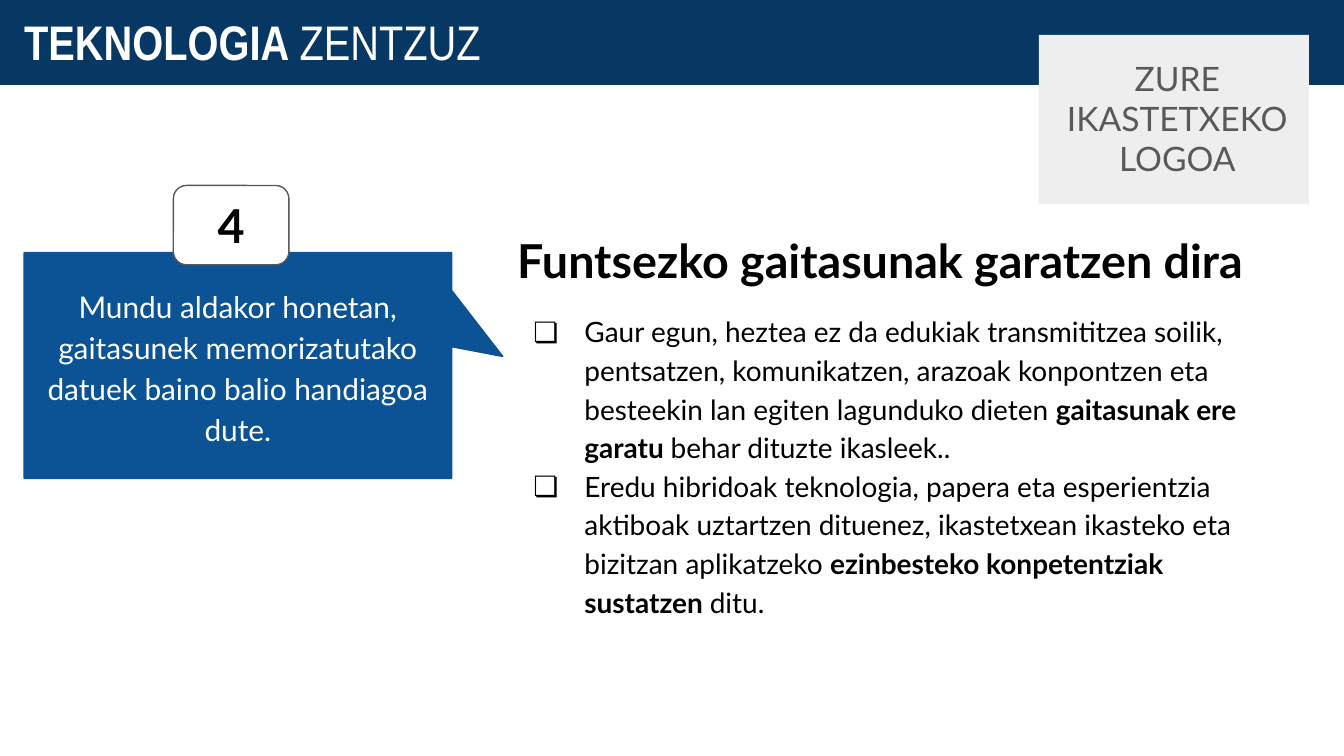
from dataclasses import dataclass

from lxml import etree
from pptx import Presentation
from pptx.dml.color import RGBColor
from pptx.enum.shapes import MSO_SHAPE
from pptx.enum.text import MSO_ANCHOR, MSO_AUTO_SIZE, PP_ALIGN
from pptx.oxml.ns import qn
from pptx.util import Inches, Pt

RECTANGLE = MSO_SHAPE.RECTANGLE
ROUNDED = MSO_SHAPE.ROUNDED_RECTANGLE
CALLOUT = MSO_SHAPE.ROUNDED_RECTANGULAR_CALLOUT
TOP, MIDDLE, BOTTOM = MSO_ANCHOR.TOP, MSO_ANCHOR.MIDDLE, MSO_ANCHOR.BOTTOM
LEFT, CENTER = PP_ALIGN.LEFT, PP_ALIGN.CENTER
FIXED, GROW = MSO_AUTO_SIZE.NONE, MSO_AUTO_SIZE.SHAPE_TO_FIT_TEXT


@dataclass(frozen=True)
class Theme:
    band: str = "073763"
    callout: str = "0B5394"
    panel: str = "EEEEEE"
    grey: str = "595959"
    white: str = "FFFFFF"
    black: str = "000000"
    title_font: str = "Arial Narrow"
    body_font: str = "Lato"
    title_size: float = 26
    heading_size: float = 25
    logo_size: float = 18
    callout_size: float = 16
    body_size: float = 15


THEME = Theme()


def color(value):
    return RGBColor.from_string(value)


def set_attributes(target, values):
    for name, value in values.items():
        setattr(target, name, value)


def format_frame(frame, anchor=TOP, fit=FIXED, left=0.1):
    set_attributes(frame, {
        "word_wrap": True, "auto_size": fit, "vertical_anchor": anchor,
        "margin_left": Inches(left), "margin_right": Inches(0.1),
        "margin_top": Inches(0.1), "margin_bottom": Inches(0.1),
    })


def write(paragraph, runs, size, ink, font=THEME.body_font, **layout):
    set_attributes(paragraph, layout)
    for text, bold in runs:
        run = paragraph.add_run()
        run.text = text
        set_attributes(run.font, {"name": font, "size": Pt(size), "bold": bold})
        run.font.color.rgb = color(ink)


def paint(shape, fill, line=None, width=0.75):
    shape.shadow.inherit = False
    shape.fill.solid()
    shape.fill.fore_color.rgb = color(fill)
    if line is None:
        shape.line.fill.background()
    else:
        shape.line.color.rgb = color(line)
        shape.line.width = Pt(width)


def add_block(slide, kind, box, fill, line=None, adjustments=()):
    shape = slide.shapes.add_shape(kind, *map(Inches, box))
    paint(shape, fill, line)
    for index, value in enumerate(adjustments):
        shape.adjustments[index] = value
    return shape


def add_bullet(paragraph, character):
    properties = paragraph._p.get_or_add_pPr()
    properties.set("marL", str(Inches(0.5)))
    properties.set("indent", str(Inches(-0.38)))
    bullet_color = etree.SubElement(properties, qn("a:buClr"))
    etree.SubElement(bullet_color, qn("a:srgbClr"), val=THEME.black)
    etree.SubElement(properties, qn("a:buFont"), typeface=THEME.body_font)
    etree.SubElement(properties, qn("a:buChar"), char=character)


def place_title(slide, box):
    title = slide.shapes.title
    left, top, width, height = map(Inches, box)
    set_attributes(title, {"left": left, "top": top, "width": width, "height": height})
    paint(title, THEME.band, THEME.band, 1.5)
    format_frame(title.text_frame, BOTTOM, left=0.18)
    write(title.text_frame.paragraphs[0], [("TEKNOLOGIA ", True), ("ZENTZUZ", False)],
          THEME.title_size, THEME.white, THEME.title_font, alignment=LEFT)


def place_explanation(slide, box):
    frame = slide.shapes.add_textbox(*map(Inches, box)).text_frame
    format_frame(frame, fit=GROW)
    write(frame.paragraphs[0], [("Funtsezko gaitasunak garatzen dira", True)],
          THEME.heading_size, THEME.black, line_spacing=1.15, space_before=Pt(14))
    points = [
        (12, [("Gaur egun, heztea ez da edukiak transmititzea soilik, pentsatzen, "
               "komunikatzen, arazoak konpontzen eta besteekin lan egiten lagunduko dieten ", False),
              ("gaitasunak ere garatu ", True),
              ("behar dituzte ikasleek..", False)]),
        (0, [("Eredu hibridoak teknologia, papera eta esperientzia aktiboak uztartzen "
              "dituenez, ikastetxean ikasteko eta bizitzan aplikatzeko ", False),
             ("ezinbesteko konpetentziak sustatzen ", True),
             ("ditu.", False)]),
    ]
    for space, runs in points:
        paragraph = frame.add_paragraph()
        write(paragraph, runs, THEME.body_size, THEME.black,
              line_spacing=1.15, space_before=Pt(space))
        add_bullet(paragraph, "❏")


def place_callout(slide, box):
    left, top, width, height = box
    callout = add_block(slide, CALLOUT, box, THEME.callout, THEME.callout, (0.62, -0.04, 0))
    format_frame(callout.text_frame, MIDDLE)
    write(callout.text_frame.paragraphs[0],
          [("Mundu aldakor honetan, gaitasunek memorizatutako datuek baino "
            "balio handiagoa dute.", False)],
          THEME.callout_size, THEME.white,
          alignment=CENTER, line_spacing=1.15, space_before=Pt(8))
    number = add_block(slide, ROUNDED, (left + 1.11, top - 0.5, 0.86, 0.59),
                       THEME.white, THEME.grey)
    format_frame(number.text_frame, MIDDLE)
    write(number.text_frame.paragraphs[0], [("4", True)],
          THEME.heading_size, THEME.black, alignment=CENTER)


def place_logo_panel(slide, box):
    left, top, width, height = box
    add_block(slide, RECTANGLE, box, THEME.panel)
    label_box = (left + 0.05, top + 0.07, width - 0.05, 0.8)
    frame = slide.shapes.add_textbox(*map(Inches, label_box)).text_frame
    format_frame(frame)
    write(frame.paragraphs[0], [("ZURE IKASTETXEKO LOGOA", False)],
          THEME.logo_size, THEME.grey, alignment=CENTER)


def main():
    presentation = Presentation()
    presentation.slide_width = Inches(10)
    presentation.slide_height = Inches(10 * 9 / 16)
    slide = presentation.slides.add_slide(presentation.slide_layouts[5])
    place_title(slide, (0, 0, 10, 0.62))
    place_explanation(slide, (3.75, 1.56, 5.78, 4.02))
    place_callout(slide, (0.18, 1.88, 3.18, 1.68))
    place_logo_panel(slide, (7.73, 0.26, 2.01, 1.26))
    presentation.save("out.pptx")


if __name__ == "__main__":
    main()
